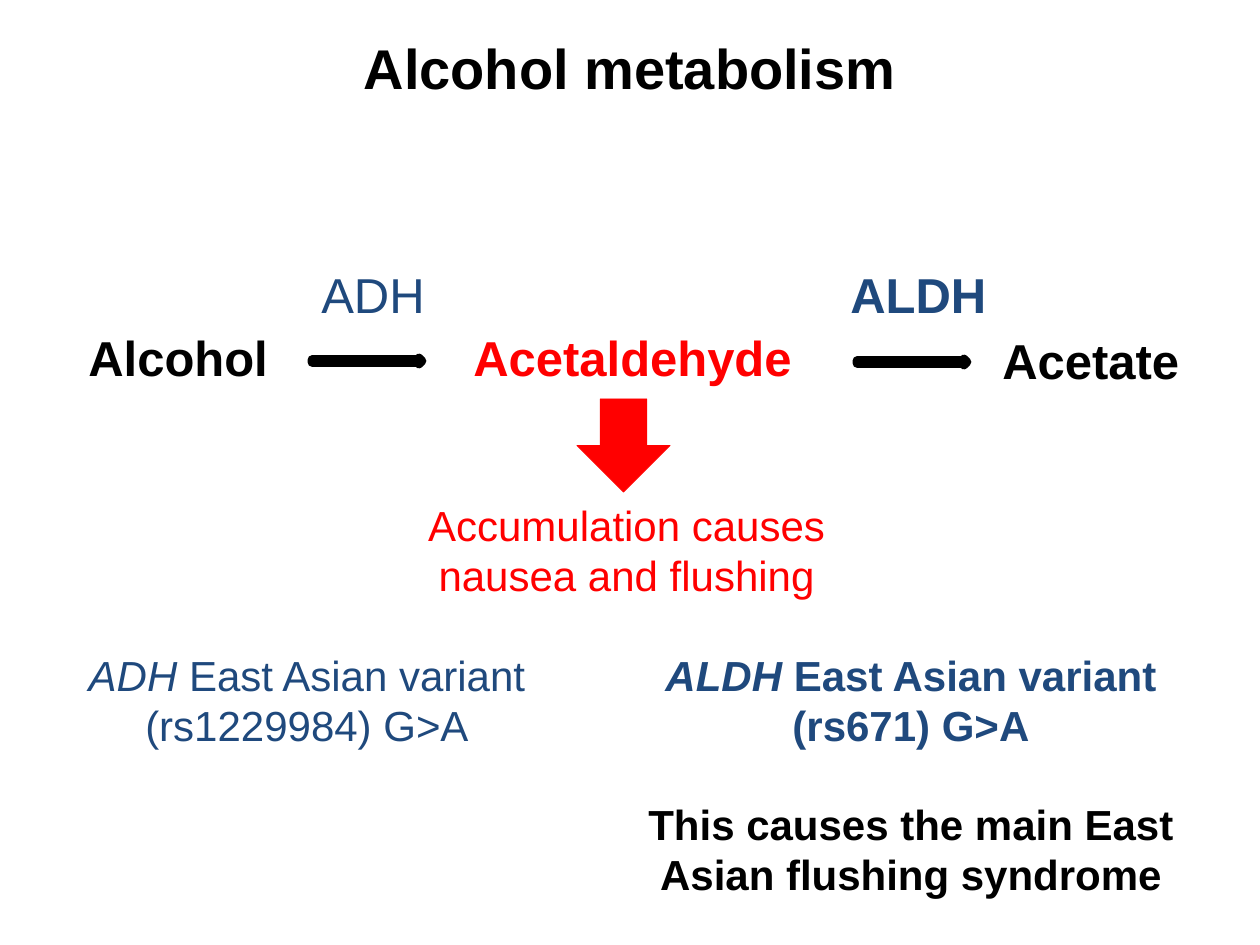
import pptx
import pptx.util
import pptx.dml.color
import pptx.enum.shapes
import pptx.enum.text

SCALE = 914400 / 126  # EMU per px
THEME = {
    "font": "Arial",
    "black": "000000", "red": "FF0000", "navy": "1F497D", "blue": "4F81BD",
    "title": 32, "label": 28, "note": 24,
}

# Content: a span is (text, colour, bold, italic); a box is (left, top, width, height)
TITLE = ((0, 0, 1260, 135), [[("Alcohol metabolism", "black", True, False)]])
LABELS = [
    ((76, 321, 207, 72), [[("Alcohol", "black", True, False)]]),
    ((461, 321, 348, 72), [[("Acetaldehyde", "red", True, False)]]),
    ((990, 324, 205, 72), [[("Acetate", "black", True, False)]]),
    ((309, 258, 132, 72), [[("ADH", "navy", False, False)]]),
    ((838, 258, 163, 72), [[("ALDH", "navy", True, False)]]),
]
NOTES = [
    ((359, 493, 535, 115),
     [[("Accumulation causes nausea and flushing", "red", False, False)]]),
    ((74, 643, 466, 115),
     [[("ADH ", "navy", False, True), ("East Asian variant", "navy", False, False)],
      [("(rs1229984) G>A", "navy", False, False)]]),
    ((626, 643, 570, 302),
     [[("ALDH ", "navy", True, True), ("East Asian variant", "navy", True, False)],
      [("(rs671) G>A", "navy", True, False)],
      [("This causes the main East Asian flushing syndrome", "black", True, False)]]),
]
CONCLUSION_GAP = 27.6  # one line of note text, in points
# Arrows: box, direction, fill, line colour, line width
ARROWS = [
    ((312, 358, 110, 6), "RIGHT_ARROW", "black", "black", 5),
    ((857, 359, 110, 6), "RIGHT_ARROW", "blue", "black", 5),
    ((577, 399, 93, 93), "DOWN_ARROW", "red", "red", 0.5),
]


def px(length):
    return pptx.util.Emu(round(length * SCALE))


def color(name):
    return pptx.dml.color.RGBColor.from_string(THEME[name])


def write(box, paragraphs, size, align, wrap=True):
    frame = box.text_frame
    frame.word_wrap = wrap
    for index, spans in enumerate(paragraphs):
        para = frame.paragraphs[0] if index == 0 else frame.add_paragraph()
        para.alignment = align
        for text, tint, bold, italic in spans:
            span = para.add_run()
            span.text = text
            font = span.font
            font.name, font.size = THEME["font"], pptx.util.Pt(THEME[size])
            font.bold, font.italic = bold, italic
            font.color.rgb = color(tint)
    return frame


def add_arrow(page, place, kind, fill, line, width):
    shape_type = getattr(pptx.enum.shapes.MSO_SHAPE, kind)
    arrow = page.shapes.add_shape(shape_type, *map(px, place))
    arrow.shadow.inherit = False
    arrow.fill.solid()
    arrow.fill.fore_color.rgb = color(fill)
    arrow.line.color.rgb = color(line)
    arrow.line.width = pptx.util.Pt(width)


def main():
    deck = pptx.Presentation()
    deck.slide_width, deck.slide_height = px(1260), px(945)
    page = deck.slides.add_slide(deck.slide_layouts[5])
    left, center = pptx.enum.text.PP_ALIGN.LEFT, pptx.enum.text.PP_ALIGN.CENTER

    # Title
    place, paragraphs = TITLE
    title = page.shapes.title
    title.left, title.top, title.width, title.height = map(px, place)
    frame = write(title, paragraphs, "title", center)
    frame.vertical_anchor = pptx.enum.text.MSO_ANCHOR.MIDDLE

    # Pathway: compounds, enzymes and arrows
    for place, paragraphs in LABELS:
        box = page.shapes.add_textbox(*map(px, place))
        write(box, paragraphs, "label", left, wrap=False)
    for arrow in ARROWS:
        add_arrow(page, *arrow)

    # Effect and variant notes
    for place, paragraphs in NOTES:
        box = page.shapes.add_textbox(*map(px, place))
        frame = write(box, paragraphs, "note", center)
        if len(paragraphs) == 3:
            frame.paragraphs[2].space_before = pptx.util.Pt(CONCLUSION_GAP)

    deck.save("out.pptx")


if __name__ == "__main__":
    main()
